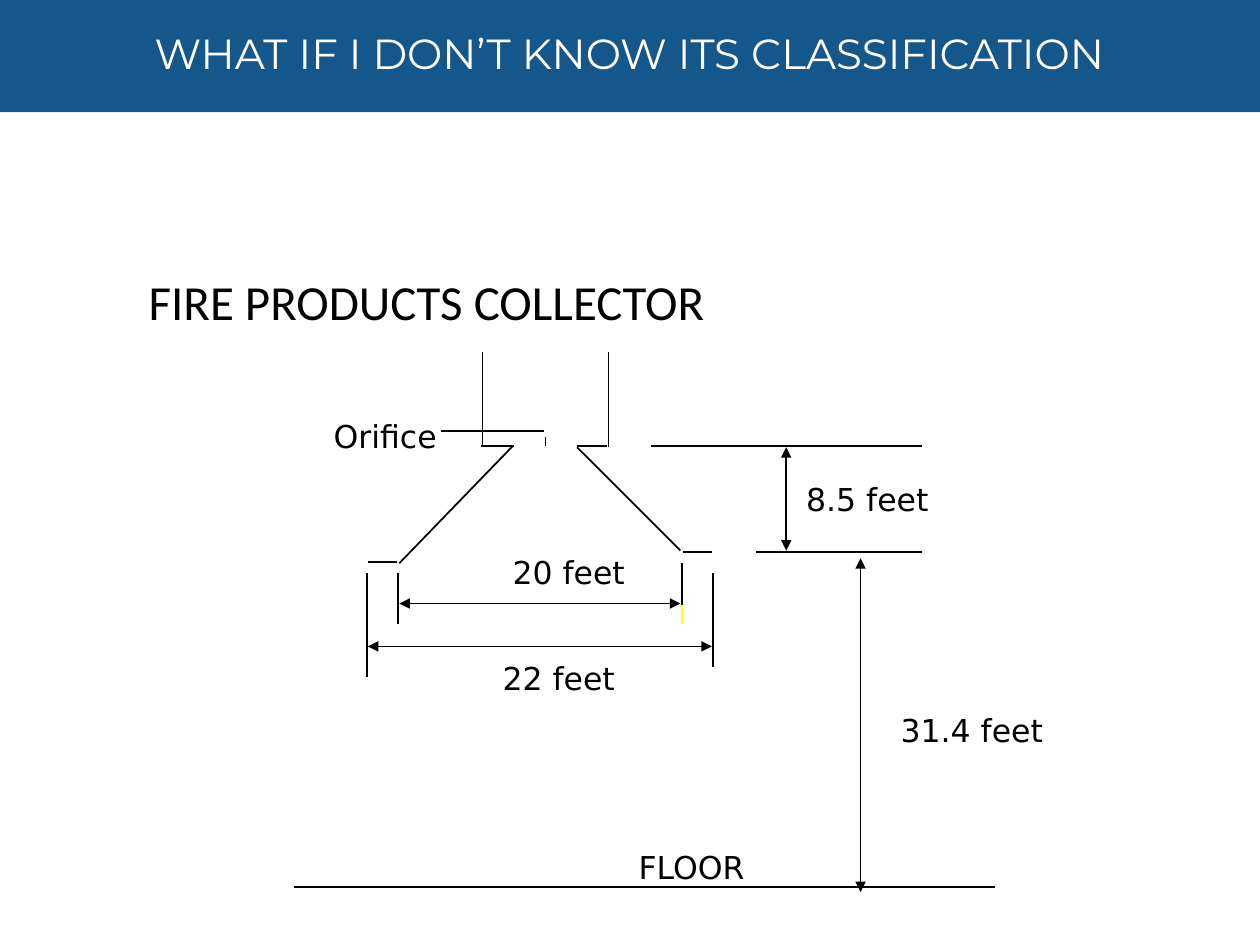
from lxml import etree
from pptx import Presentation
from pptx.dml.color import RGBColor
from pptx.enum.shapes import MSO_CONNECTOR, MSO_SHAPE
from pptx.enum.text import MSO_ANCHOR, MSO_AUTO_SIZE, PP_ALIGN
from pptx.oxml.ns import qn
from pptx.util import Inches, Pt

STRAIGHT = MSO_CONNECTOR.STRAIGHT
RECTANGLE = MSO_SHAPE.RECTANGLE
BOTTOM = MSO_ANCHOR.BOTTOM
NO_FIT, GROW = MSO_AUTO_SIZE.NONE, MSO_AUTO_SIZE.SHAPE_TO_FIT_TEXT
LEFT, CENTER = PP_ALIGN.LEFT, PP_ALIGN.CENTER

BLACK, WHITE, BLUE, YELLOW = "000000", "FFFFFF", "15578A", "FFFF00"

HEADING = "WHAT IF I DON’T KNOW ITS CLASSIFICATION"
TITLE = "FIRE PRODUCTS COLLECTOR"

# Each line: x1, y1, x2, y2 in inches
FLOOR = [(2.33, 7.04, 7.9, 7.04)]
COLLECTOR = [
    (2.92, 4.46, 3.15, 4.46),  # left side, lip to duct
    (3.17, 4.47, 4.07, 3.54),
    (4.08, 3.54, 3.82, 3.54),
    (3.83, 3.55, 3.83, 2.79),
    (4.58, 3.54, 4.82, 3.54),  # right side, duct to lip
    (4.83, 3.55, 4.83, 2.79),
    (4.58, 3.55, 5.4, 4.37),
    (5.42, 4.38, 5.65, 4.38),
]
ORIFICE_LEADER = [(3.5, 3.42, 4.32, 3.42), (4.33, 3.47, 4.33, 3.54)]
EXTENSIONS = [
    (2.91, 4.55, 2.91, 5.37),
    (5.66, 4.55, 5.66, 5.29),
    (3.16, 4.55, 3.16, 4.95),
    (5.41, 4.47, 5.41, 4.87),
    (6, 4.38, 7.32, 4.38),
    (5.17, 3.54, 7.32, 3.54),
]
HIGHLIGHT = [(5.41, 4.8, 5.41, 4.95)]
DIMENSIONS = [
    (3.17, 4.79, 5.4, 4.79),
    (2.92, 5.13, 5.65, 5.13),
    (6.83, 4.43, 6.83, 7.08),
    (6.24, 3.55, 6.24, 4.37),
]

# Text, left, top, width
LABELS = [
    ("Orifice", 2.55, 3.26, 1.02),
    ("8.5 feet", 6.3, 3.76, 1.19),
    ("20 feet", 3.97, 4.34, 1.1),
    ("22 feet", 3.89, 5.18, 1.1),
    ("31.4 feet", 7.05, 5.59, 1.36),
    ("FLOOR", 4.97, 6.68, 1.05),
]
LABEL_HEIGHT = 0.4


def color(hex_value):
    return RGBColor.from_string(hex_value)


def write(shape, text, size=18, font="DejaVu Sans", ink=BLACK, align=LEFT,
          wrap=True, fit=GROW, spacing=None):
    frame = shape.text_frame
    frame.word_wrap = wrap
    frame.auto_size = fit
    paragraph = frame.paragraphs[0]
    paragraph.alignment = align
    paragraph.line_spacing = spacing
    run = paragraph.add_run()
    run.text = text
    run.font.size = Pt(size)
    run.font.name = font
    run.font.color.rgb = color(ink)


def draw_lines(shapes, lines, ink=BLACK, arrows=False):
    for ends in lines:
        connector = shapes.add_connector(STRAIGHT, *map(Inches, ends))
        connector.line.width = Pt(1)
        connector.line.color.rgb = color(ink)
        properties = connector._element.spPr
        if arrows:
            outline = properties.find(qn("a:ln"))
            for end in ("a:headEnd", "a:tailEnd"):
                etree.SubElement(outline, qn(end), type="triangle")
        etree.SubElement(properties, qn("a:effectLst"))


prs = Presentation()
prs.slide_width, prs.slide_height = Inches(10), Inches(7.5)
slide = prs.slides.add_slide(prs.slide_layouts[5])

band = slide.shapes.add_shape(RECTANGLE, 0, 0, prs.slide_width, Inches(0.89))
band.shadow.inherit = False
band.fill.solid()
band.fill.fore_color.rgb = color(BLUE)
band.line.fill.background()

title = slide.shapes.title
title.left, title.top, title.width, title.height = map(
    Inches, (1.08, 1.73, 7.73, 0.94))
title.text_frame.vertical_anchor = BOTTOM
write(title, TITLE, size=28, font="Calibri", fit=NO_FIT, spacing=0.85)

diagram = slide.shapes.add_group_shape().shapes
for part in (FLOOR, COLLECTOR, ORIFICE_LEADER, EXTENSIONS):
    draw_lines(diagram, part)
draw_lines(diagram, DIMENSIONS, arrows=True)
draw_lines(diagram, HIGHLIGHT, ink=YELLOW)
for text, *place in LABELS:
    label = diagram.add_textbox(*map(Inches, (*place, LABEL_HEIGHT)))
    write(label, text, wrap=False)

heading = slide.shapes.add_textbox(*map(Inches, (0.08, 0.17, 9.83, 0.5)))
write(heading, HEADING, size=24, font="Montserrat", ink=WHITE, align=CENTER)

prs.save("out.pptx")
